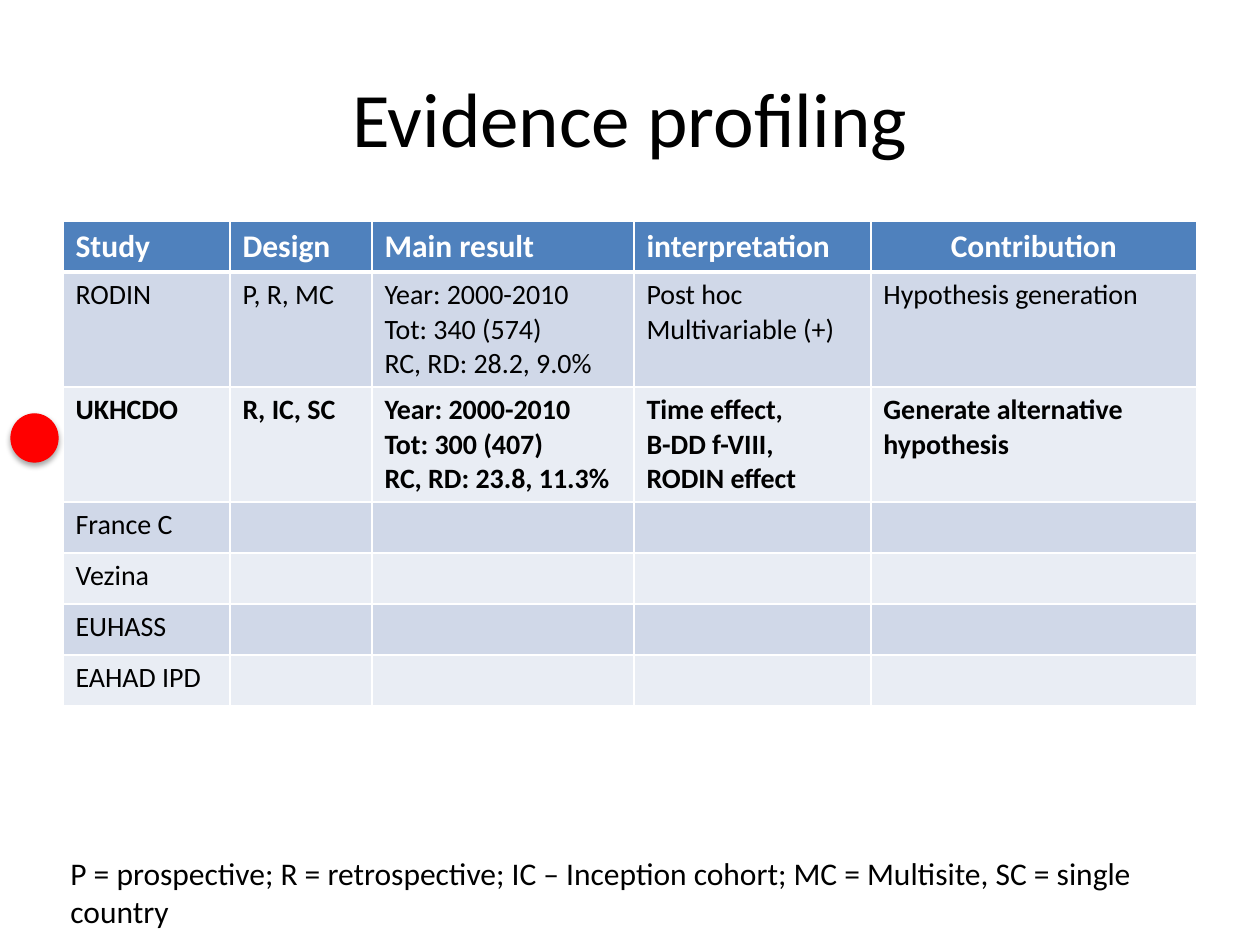
import pptx
import pptx.dml.color
import pptx.enum.shapes
import pptx.enum.text
import pptx.oxml
import pptx.oxml.ns
import pptx.util

PX = 914400 / 126
FONT = "Calibri"
COLORS = {
    "text": "000000",
    "white": "FFFFFF",
    "header": "4F81BD",
    "odd_row": "D0D8E8",
    "even_row": "E9EDF4",
    "marker": "FF0000",
}
NAMESPACE = pptx.oxml.ns.nsdecls("a")
ALIGN = pptx.enum.text.PP_ALIGN


def px(*lengths):
    return [pptx.util.Emu(round(length * PX)) for length in lengths]


def write(text_frame, text, size, color="text", bold=False, align=ALIGN.LEFT):
    """Fill a text frame, one paragraph per line of text, in one style."""
    text_frame.word_wrap = True
    text_frame.text = text
    for para in text_frame.paragraphs:
        para.alignment = align
        para.font.size = pptx.util.Pt(size)
        for span in para.runs:
            span.font.name = FONT
            span.font.size = pptx.util.Pt(size)
            span.font.bold = bold
            span.font.color.rgb = pptx.dml.color.RGBColor.from_string(COLORS[color])


deck = pptx.Presentation()
deck.slide_width, deck.slide_height = px(1260, 945)
page = deck.slides.add_slide(deck.slide_layouts[6])

# Title
title = page.shapes.add_textbox(*px(63, 38, 1134, 157))
title.text_frame.vertical_anchor = pptx.enum.text.MSO_ANCHOR.MIDDLE
write(title.text_frame, "Evidence profiling", 44, align=ALIGN.CENTER)

# Evidence table
rows = [
    ["Study", "Design", "Main result", "interpretation", "Contribution"],
    ["RODIN", "P, R, MC", "Year: 2000-2010\nTot: 340 (574)\nRC, RD: 28.2, 9.0%",
     "Post hoc\nMultivariable (+)", "Hypothesis generation"],
    ["UKHCDO", "R, IC, SC", "Year: 2000-2010\nTot: 300 (407)\nRC, RD: 23.8, 11.3%",
     "Time effect,\nB-DD f-VIII,\nRODIN effect", "Generate alternative hypothesis"],
    ["France C"],
    ["Vezina"],
    ["EUHASS"],
    ["EAHAD IPD"],
]
column_widths = px(167, 142, 262, 237, 326)
row_heights = px(51, 115, 115, 51, 51, 51, 51)
frame = page.shapes.add_table(len(rows), len(column_widths),
                              *px(63, 221, 1134, 485))
table = frame.table
for column, width in zip(table.columns, column_widths):
    column.width = width

for row_index, texts in enumerate(rows):
    table.rows[row_index].height = row_heights[row_index]
    is_header = row_index == 0
    if is_header:
        fill = "header"
    else:
        fill = "odd_row" if row_index % 2 else "even_row"
    for column_index, cell in enumerate(table.rows[row_index].cells):
        cell.fill.solid()
        cell.fill.fore_color.rgb = pptx.dml.color.RGBColor.from_string(COLORS[fill])
        widths = {"lnL": 1, "lnR": 1, "lnT": 3 if row_index == 1 else 1,
                  "lnB": 3 if is_header else 1}
        properties = cell._tc.get_or_add_tcPr()
        for position, (side, points) in enumerate(widths.items()):
            properties.insert(position, pptx.oxml.parse_xml(
                f'<a:{side} {NAMESPACE} w="{pptx.util.Pt(points)}"><a:solidFill>'
                f'<a:srgbClr val="{COLORS["white"]}"/></a:solidFill></a:{side}>'))
        if column_index < len(texts):
            text = texts[column_index]
            write(cell.text_frame, text,
                  size=18 if is_header else 16,
                  color="white" if is_header else "text",
                  bold=is_header or texts[0] == "UKHCDO",
                  align=ALIGN.CENTER if text == "Contribution" else ALIGN.LEFT)

# Marker beside the highlighted study
marker = page.shapes.add_shape(pptx.enum.shapes.MSO_SHAPE.OVAL, *px(11, 414, 47, 48))
marker_color = pptx.dml.color.RGBColor.from_string(COLORS["marker"])
marker.fill.solid()
marker.fill.fore_color.rgb = marker_color
marker.line.color.rgb = marker_color
marker.line.width = pptx.util.Pt(0.75)
marker._element.spPr.append(pptx.oxml.parse_xml(
    f'<a:effectLst {NAMESPACE}><a:outerShdw blurRad="40000" dist="23000" dir="5400000" '
    f'rotWithShape="0"><a:srgbClr val="{COLORS["text"]}"><a:alpha val="35000"/>'
    '</a:srgbClr></a:outerShdw></a:effectLst>'))

# Abbreviations
legend = page.shapes.add_textbox(*px(58, 848, 1139, 89))
write(legend.text_frame,
      "P = prospective; R = retrospective; IC – Inception cohort; "
      "MC = Multisite, SC = single country", 18)

deck.save("out.pptx")
